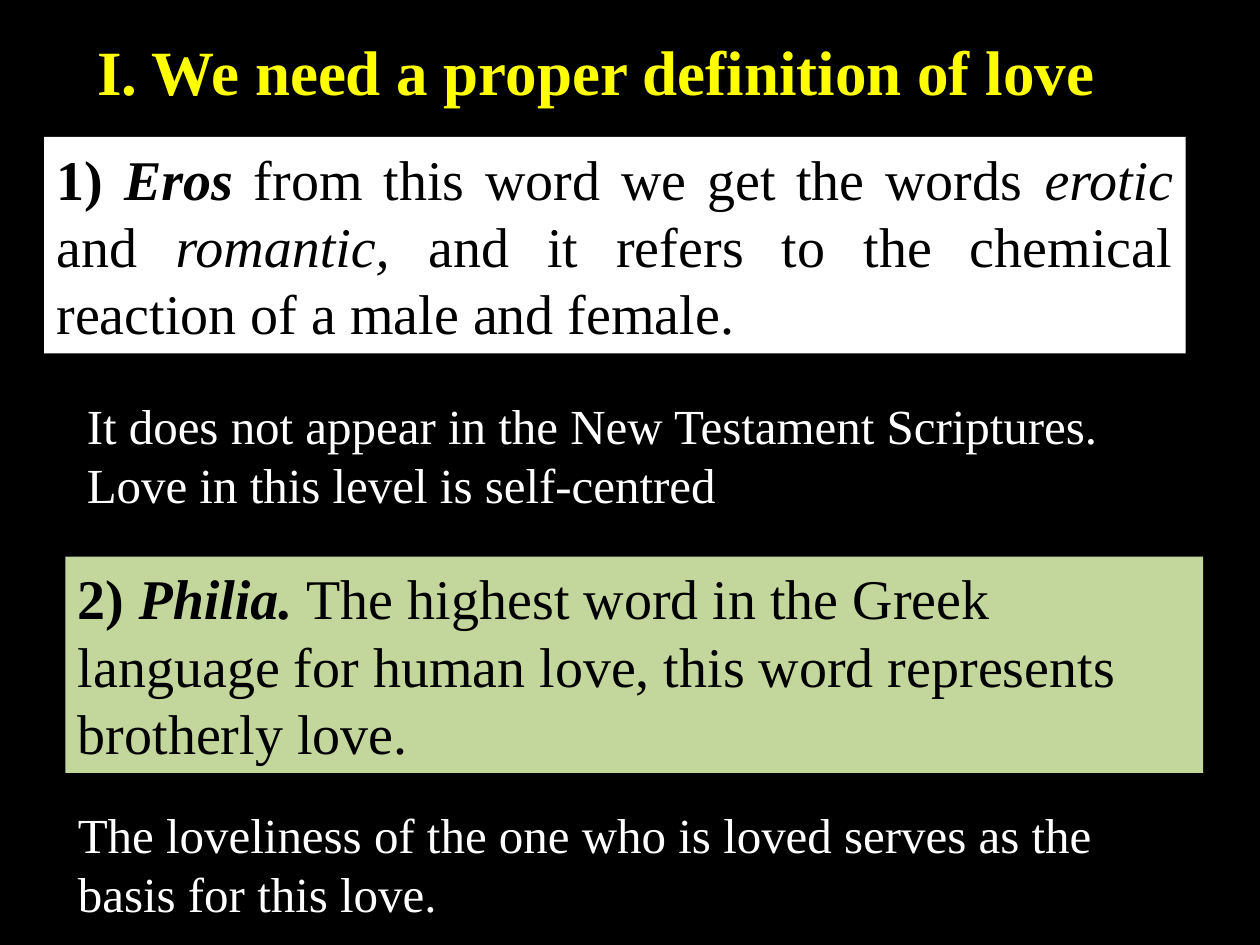
from pptx import Presentation
from pptx.dml.color import RGBColor
from pptx.enum.shapes import MSO_SHAPE
from pptx.enum.text import MSO_ANCHOR, MSO_AUTO_SIZE, PP_ALIGN
from pptx.util import Inches, Pt

RECT = MSO_SHAPE.RECTANGLE
TOP, MIDDLE = MSO_ANCHOR.TOP, MSO_ANCHOR.MIDDLE
FIT = MSO_AUTO_SIZE.SHAPE_TO_FIT_TEXT
LEFT, JUSTIFY = PP_ALIGN.LEFT, PP_ALIGN.JUSTIFY

BLACK = RGBColor(0x00, 0x00, 0x00)
WHITE = RGBColor(0xFF, 0xFF, 0xFF)
YELLOW = RGBColor(0xFF, 0xFF, 0x00)
GREEN = RGBColor(0xC3, 0xD6, 0x9B)

WIDE, HIGH = Inches(10), Inches(7.5)
FACE = "Times New Roman"
PLAIN = {"bold": False, "italic": False}
BOLD = {"bold": True, "italic": False}
SLANT = {"bold": False, "italic": True}
STRONG = {"bold": True, "italic": True}

HEAD_BOX = (0.067, 0.028, 0.843, 0.095)
EROS_BOX = (0.035, 0.145, 0.906, 0.229)
EROS_NOTE = (0.059, 0.412, 0.888, 0.139)
PHILIA_BOX = (0.052, 0.589, 0.903, 0.229)
PHILIA_NOTE = (0.052, 0.845, 0.903, 0.139)


def scale(box):
    x, y, w, h = box
    return [round(v) for v in (x * WIDE, y * HIGH, w * WIDE, h * HIGH)]


def write(shape, runs, size, color, align=LEFT, anchor=TOP):
    frame = shape.text_frame
    form = {"word_wrap": True, "auto_size": FIT, "vertical_anchor": anchor}
    for key, value in form.items():
        setattr(frame, key, value)
    para = frame.paragraphs[0]
    para.alignment = align
    for text, style in runs:
        run = para.add_run()
        run.text = text
        for key, value in {"name": FACE, "size": Pt(size), **style}.items():
            setattr(run.font, key, value)
        run.font.color.rgb = color


def add_head(slide, box, text):
    head = slide.shapes.title
    head.left, head.top, head.width, head.height = scale(box)
    write(head, [(text, BOLD)], 36, YELLOW)


def add_panel(slide, box, fill, runs, align=LEFT):
    panel = slide.shapes.add_shape(RECT, *scale(box))
    panel.shadow.inherit = False
    panel.fill.solid()
    panel.fill.fore_color.rgb = fill
    panel.line.fill.background()
    write(panel, runs, 32, BLACK, align, MIDDLE)


def add_note(slide, box, text):
    note = slide.shapes.add_textbox(*scale(box))
    write(note, [(text, PLAIN)], 28, WHITE)


def main():
    deck = Presentation()
    deck.slide_width, deck.slide_height = WIDE, HIGH
    slide = deck.slides.add_slide(deck.slide_layouts.get_by_name("Title Only"))
    slide.background.fill.solid()
    slide.background.fill.fore_color.rgb = BLACK

    add_head(slide, HEAD_BOX, "I. We need a proper definition of love")
    add_panel(slide, EROS_BOX, WHITE, [
        ("1) ", BOLD),
        ("Eros ", STRONG),
        ("from this word we get the words ", PLAIN),
        ("erotic", SLANT),
        (" and ", PLAIN),
        ("romantic, ", SLANT),
        ("and it refers to the chemical reaction of a male and female.", PLAIN),
    ], JUSTIFY)
    add_panel(slide, PHILIA_BOX, GREEN, [
        ("2) ", BOLD),
        ("Philia. ", STRONG),
        ("The highest word in the Greek language for human love, "
         "this word represents brotherly love.", PLAIN),
    ])
    add_note(slide, EROS_NOTE,
             "It does not appear in the New Testament Scriptures. "
             "Love in this level is self-centred")
    add_note(slide, PHILIA_NOTE,
             "The loveliness of the one who is loved serves as the "
             "basis for this love.")
    deck.save("out.pptx")


if __name__ == "__main__":
    main()
